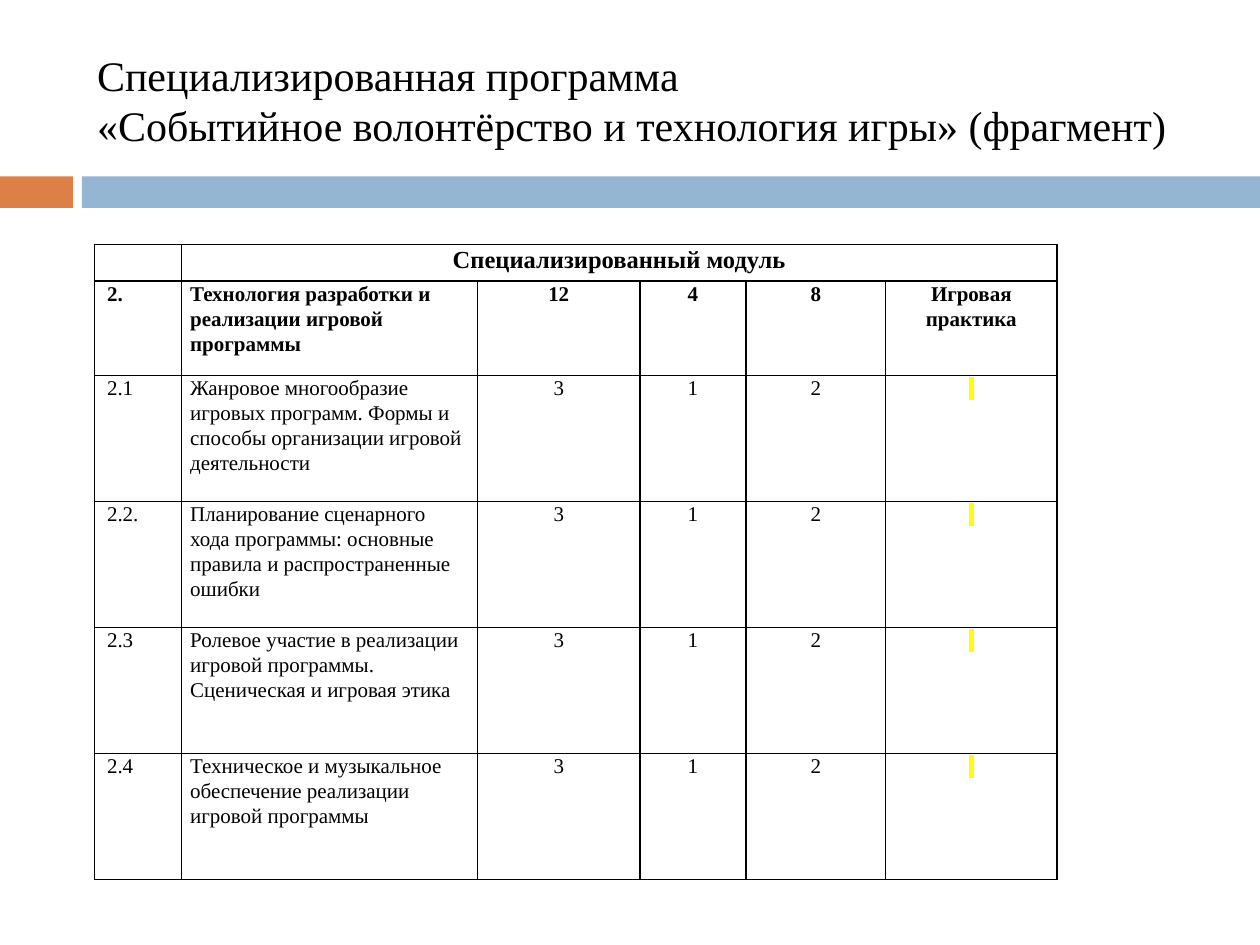
from lxml.etree import SubElement
from pptx import Presentation
from pptx.dml.color import RGBColor
from pptx.enum.shapes import MSO_SHAPE
from pptx.enum.text import MSO_ANCHOR, PP_ALIGN
from pptx.oxml.ns import qn
from pptx.util import Inches, Pt

COLORS = {"text": "000000", "accent": "DD8047", "band": "94B6D2", "mark": "FFFF00"}
FONT = "Times New Roman"
COLUMN_WIDTHS = [0.69, 2.35, 1.29, 0.84, 1.11, 1.36]
ROW_HEIGHTS = [0.29, 0.75, 1, 1, 1, 1]
MARK = "\N{NO-BREAK SPACE}"
HOURS = ["3", "1", "2"]
ROWS = [
    ["", "Специализированный модуль", "", "", "", ""],
    ["2.", "Технология разработки и реализации игровой программы",
     "12", "4", "8", "Игровая практика"],
    ["2.1", "Жанровое многообразие игровых программ. Формы и способы "
     "организации игровой деятельности", *HOURS, MARK],
    ["2.2.", "Планирование сценарного хода программы: основные правила "
     "и распространенные ошибки", *HOURS, MARK],
    ["2.3", "Ролевое участие в реализации игровой программы. "
     "Сценическая и игровая этика", *HOURS, MARK],
    ["2.4", "Техническое и музыкальное обеспечение реализации игровой программы",
     *HOURS, MARK],
]


def style_font(font, size, bold=False):
    font.name, font.size, font.bold = FONT, Pt(size), bold
    font.color.rgb = RGBColor.from_string(COLORS["text"])


def add_borders(cell):
    properties = cell._tc.get_or_add_tcPr()
    for position, side in enumerate(("lnL", "lnR", "lnT", "lnB")):
        line = properties.makeelement(qn(f"a:{side}"), {"w": str(Pt(1))})
        fill = SubElement(line, qn("a:solidFill"))
        SubElement(fill, qn("a:srgbClr"), val=COLORS["text"])
        properties.insert(position, line)


presentation = Presentation()
presentation.slide_width, presentation.slide_height = Inches(10), Inches(7.5)
slide = presentation.slides.add_slide(presentation.slide_layouts[5])

# Divider under the title
for left, width, color in ((0, 0.58, "accent"), (0.65, 9.35, "band")):
    bar = slide.shapes.add_shape(
        MSO_SHAPE.RECTANGLE, Inches(left), Inches(1.4), Inches(width), Inches(0.25))
    bar.shadow.inherit = False
    bar.fill.solid()
    bar.fill.fore_color.rgb = RGBColor.from_string(COLORS[color])
    bar.line.fill.background()

title = slide.shapes.title
title.left, title.top = Inches(0.67), Inches(0.25)
title.width, title.height = Inches(8.92), Inches(1.08)
title.text_frame.text = (
    "Специализированная программа\v"
    "«Событийное волонтёрство и технология игры» (фрагмент)")
title.text_frame.vertical_anchor = MSO_ANCHOR.MIDDLE
heading = title.text_frame.paragraphs[0]
heading.alignment = PP_ALIGN.LEFT
style_font(heading.font, 24)

# Programme table
table = slide.shapes.add_table(
    len(ROW_HEIGHTS), len(COLUMN_WIDTHS), Inches(0.75), Inches(1.94),
    Inches(sum(COLUMN_WIDTHS)), Inches(sum(ROW_HEIGHTS))).table
table.first_row = table.horz_banding = False
for column, width in zip(table.columns, COLUMN_WIDTHS):
    column.width = Inches(width)
for row, height in zip(table.rows, ROW_HEIGHTS):
    row.height = Inches(height)
table.cell(0, 1).merge(table.cell(0, 5))

for row_index, texts in enumerate(ROWS):
    for column_index, text in enumerate(texts):
        cell = table.cell(row_index, column_index)
        cell.fill.background()
        add_borders(cell)
        cell.margin_left = cell.margin_right = Inches(0.07)
        cell.margin_top = cell.margin_bottom = 0
        paragraph = cell.text_frame.paragraphs[0]
        paragraph.line_spacing = 1.07
        centered = row_index == 0 or column_index > 1
        paragraph.alignment = PP_ALIGN.CENTER if centered else PP_ALIGN.LEFT
        style_font(paragraph.font, 14 if row_index == 0 else 12, row_index < 2)
        if column_index == 0:
            paragraph._p.get_or_add_pPr().set("marL", str(Inches(0.03)))
        if text:
            run = paragraph.add_run()
            run.text = text
            if text == MARK:
                highlight = SubElement(run._r.get_or_add_rPr(), qn("a:highlight"))
                SubElement(highlight, qn("a:srgbClr"), val=COLORS["mark"])

presentation.save("out.pptx")
